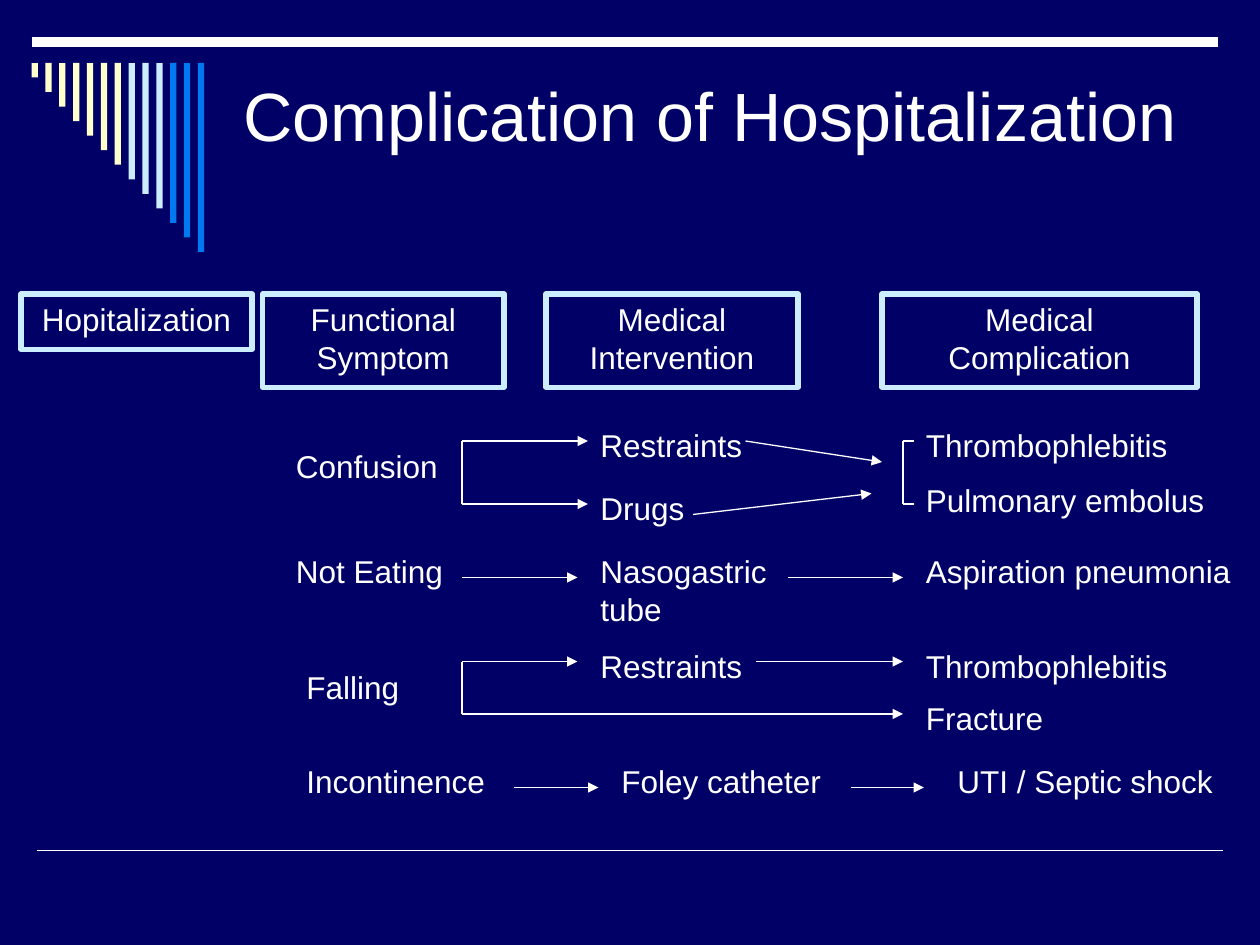
import pptx
import pptx.util
import pptx.dml.color
import pptx.enum.shapes
import pptx.enum.text
import pptx.oxml.ns
from lxml import etree

Pt = pptx.util.Pt
RGB = pptx.dml.color.RGBColor
NAVY = RGB(0x00, 0x00, 0x66)
WHITE = RGB(0xFF, 0xFF, 0xFF)
CREAM = RGB(0xFF, 0xFF, 0xCC)
PALE = RGB(0xCC, 0xEC, 0xFF)
BLUE = RGB(0x00, 0x78, 0xF0)


class Slide:
    """Hold the style and the current slide, and draw each kind of element."""

    font = "Arial"
    size = 18
    lead = 21.6
    gap = 10

    def __init__(self, deck):
        self.page = deck.slides.add_slide(deck.slide_layouts[6])
        self.page.background.fill.solid()
        self.page.background.fill.fore_color.rgb = NAVY

    def style(self, para, size):
        para.font.name = self.font
        para.font.size = Pt(size)
        para.font.color.rgb = WHITE

    def words(self, shape, text, align):
        frame = shape.text_frame
        frame.word_wrap = True
        frame.auto_size = pptx.enum.text.MSO_AUTO_SIZE.SHAPE_TO_FIT_TEXT
        frame.vertical_anchor = pptx.enum.text.MSO_ANCHOR.TOP
        frame.text = text
        for rank, para in enumerate(frame.paragraphs):
            self.style(para, self.size)
            para.alignment = align
            para.line_spacing = Pt(self.lead)
            para.space_before = Pt(self.gap if rank else 0)

    def title(self, text, x, y, w, h):
        frame = self.page.shapes.add_textbox(Pt(x), Pt(y), Pt(w), Pt(h)).text_frame
        frame.word_wrap = True
        frame.margin_top = Pt(6)
        frame.text = text
        self.style(frame.paragraphs[0], 39)

    def label(self, text, x, y, w, h=28.8):
        box = self.page.shapes.add_textbox(Pt(x), Pt(y), Pt(w), Pt(h))
        self.words(box, text, pptx.enum.text.PP_ALIGN.LEFT)

    def rect(self, x, y, w, h):
        kind = pptx.enum.shapes.MSO_SHAPE.RECTANGLE
        shape = self.page.shapes.add_shape(kind, Pt(x), Pt(y), Pt(w), Pt(h))
        shape.shadow.inherit = False
        return shape

    def bar(self, x, y, w, h, color):
        shape = self.rect(x, y, w, h)
        shape.fill.solid()
        shape.fill.fore_color.rgb = color
        shape.line.fill.background()

    def header(self, text, x, y, w, h):
        shape = self.rect(x, y, w, h)
        shape.fill.background()
        shape.line.color.rgb = PALE
        shape.line.width = Pt(3)
        self.words(shape, text, pptx.enum.text.PP_ALIGN.CENTER)

    def line(self, x1, y1, x2, y2, width=0.75):
        kind = pptx.enum.shapes.MSO_CONNECTOR.STRAIGHT
        link = self.page.shapes.add_connector(kind, Pt(x1), Pt(y1), Pt(x2), Pt(y2))
        link.line.color.rgb = WHITE
        link.line.width = Pt(width)
        etree.SubElement(link._element.spPr, pptx.oxml.ns.qn("a:effectLst"))
        return link

    def arrow(self, x1, y1, x2, y2):
        ln = self.line(x1, y1, x2, y2).line._get_or_add_ln()
        etree.SubElement(ln, pptx.oxml.ns.qn("a:tailEnd"), type="triangle")


def main():
    deck = pptx.Presentation()
    deck.slide_width, deck.slide_height = Pt(720), Pt(540)
    slide = Slide(deck)

    slide.line(21, 486, 699, 486, 1)
    slide.line(18, 24, 696, 24, 6)
    shades = [CREAM] * 7 + [PALE] * 3 + [BLUE] * 3
    for rank, shade in enumerate(shades):
        slide.bar(18 + 7.92 * rank, 36, 3.6, 108 * (rank + 1) / len(shades), shade)
    slide.title("Complication of Hospitalization", 132, 36, 552, 102)

    for text, x, w, h in (
        ("Hopitalization", 12, 132, 31.7),
        ("Functional Symptom", 150, 138, 53.3),
        ("Medical Intervention", 312, 144, 53.3),
        ("Medical Complication", 504, 180, 53.3),
    ):
        slide.header(text, x, 168, w, h)

    need, care, harm = 162, 336, 522
    for item in (
        ("Confusion", need, 252, 144),
        ("Restraints", care, 240, 144),
        ("Drugs", care, 276, 168),
        ("Thrombophlebitis\nPulmonary embolus", harm, 240, 180, 61),
        ("Not Eating", need, 312, 108),
        ("Nasogastric tube", care, 312, 144, 50.4),
        ("Aspiration pneumonia", harm, 312, 198),
        ("Falling", need + 6, 378, 90),
        ("Restraints", care, 366, 132),
        ("Thrombophlebitis", harm, 366, 186),
        ("Fracture", harm, 396, 120),
        ("Incontinence", need + 6, 432, 150),
        ("Foley catheter", care + 12, 432, 156),
        ("UTI / Septic shock", harm + 18, 432, 162),
    ):
        slide.label(*item)

    fork, goal = 264, 516
    for ends in (
        (fork, 252, fork, 288),
        (goal, 252, goal, 288),
        (goal, 252, harm, 252),
        (goal, 288, harm, 288),
        (fork, 378, fork, 408),
    ):
        slide.line(*ends)
    for ends in (
        (fork, 252, care, 252),
        (fork, 288, care, 288),
        (426, 252, 504, 264),
        (396, 294, 498, 282),
        (fork, 330, 330, 330),
        (450, 330, goal, 330),
        (fork, 378, 330, 378),
        (432, 378, goal, 378),
        (fork, 408, goal, 408),
        (294, 450, 342, 450),
        (486, 450, 528, 450),
    ):
        slide.arrow(*ends)

    deck.save("out.pptx")


if __name__ == "__main__":
    main()
